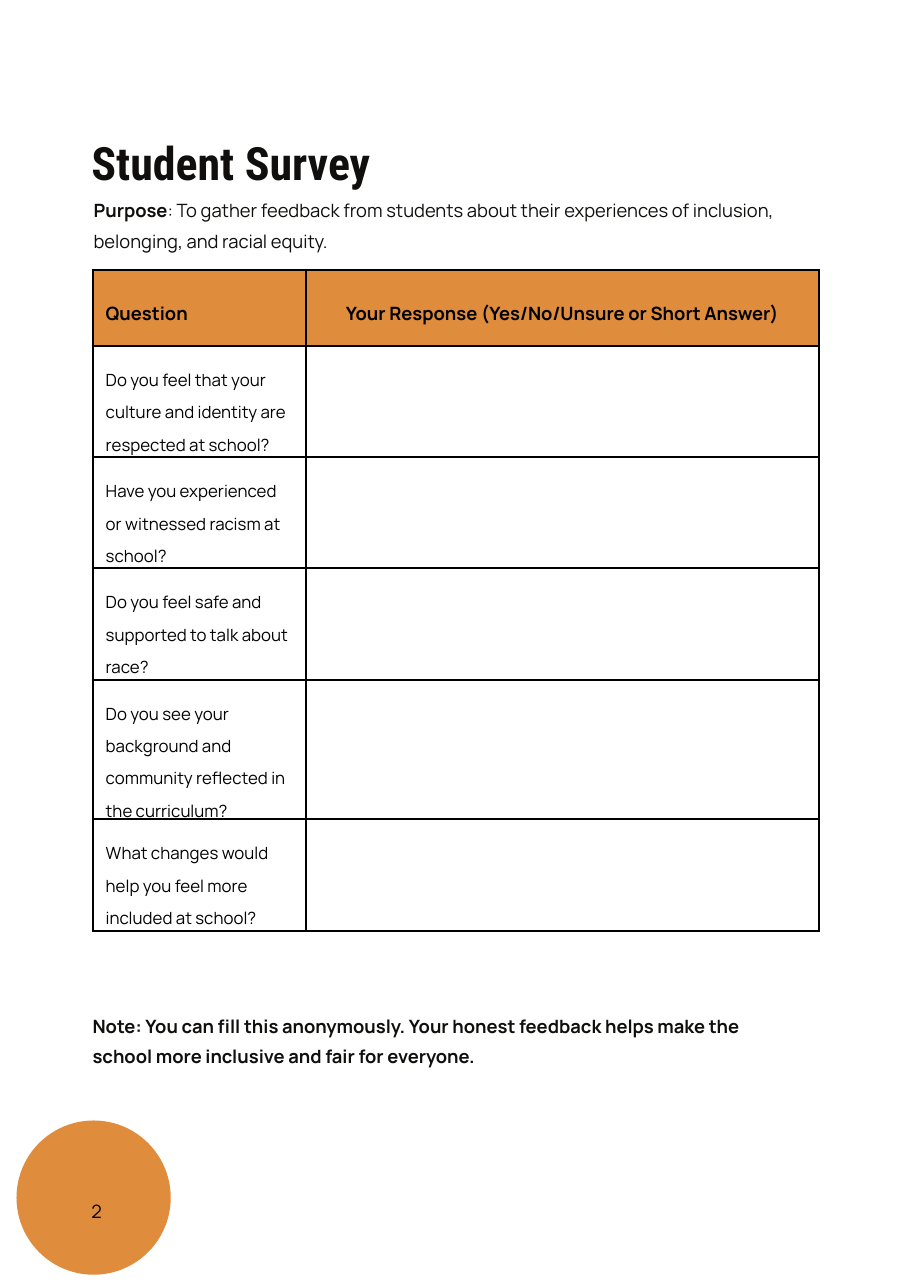
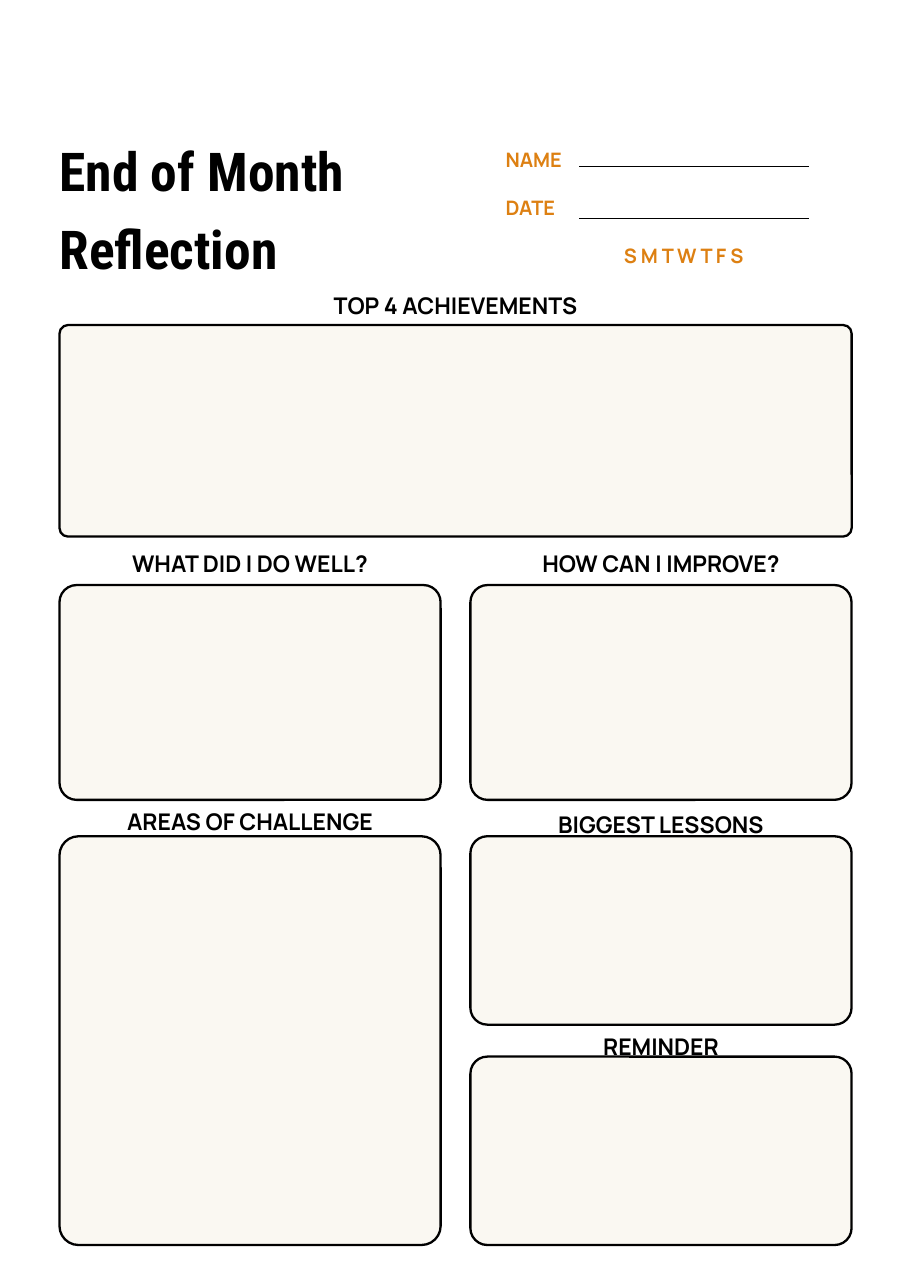
from lxml import etree
from pptx import Presentation
from pptx import util as u
from pptx.dml.color import RGBColor
from pptx.enum import shapes, text
from pptx.oxml import ns

PX = 9144  # 100 px to the inch
PAGE_W, PAGE_H = 826, 1169

BLACK = RGBColor(0x00, 0x00, 0x00)
INK = RGBColor(0x10, 0x0F, 0x0D)
ORANGE = RGBColor(0xDF, 0x8C, 0x3D)
LABEL_ORANGE = RGBColor(0xDD, 0x80, 0x12)
CREAM = RGBColor(0xFA, 0xF8, 0xF2)

TITLE_FONT, BODY_FONT = "Roboto Condensed", "Manrope"
LEFT, CENTER = text.PP_ALIGN.LEFT, text.PP_ALIGN.CENTER

QUESTIONS = [
    "Do you feel that your culture and identity are respected at school?",
    "Have you experienced or witnessed racism at school?",
    "Do you feel safe and supported to talk about race?",
    "Do you see your background and community reflected in the curriculum?",
    "What changes would help you feel more included at school?",
]


def px(*lengths):
    return [u.Emu(length * PX) for length in lengths]


def style(paragraph, size, color=BLACK, bold=False, font=BODY_FONT,
          align=LEFT, spacing=1.4):
    paragraph.alignment = align
    paragraph.line_spacing = spacing
    paragraph.font.name = font
    paragraph.font.size = u.Pt(size)
    paragraph.font.bold = bold
    paragraph.font.color.rgb = color


def add_text(slide, box, words, size, **look):
    frame = slide.shapes.add_textbox(*px(*box)).text_frame
    frame.margin_left = frame.margin_right = 0
    frame.margin_top = frame.margin_bottom = 0
    frame.word_wrap = True
    frame.auto_size = text.MSO_AUTO_SIZE.SHAPE_TO_FIT_TEXT
    paragraph = frame.paragraphs[0]
    paragraph.text = words
    style(paragraph, size, **look)
    return paragraph


def add_title(slide, box, words, size, color, spacing):
    add_text(slide, box, words, size, color=color, bold=True,
             font=TITLE_FONT, spacing=spacing)


def add_panel(slide, box, radius):
    panel = slide.shapes.add_shape(shapes.MSO_SHAPE.ROUNDED_RECTANGLE, *px(*box))
    panel.adjustments[0] = round(radius / min(box[2:]), 2)
    panel.shadow.inherit = False
    panel.fill.solid()
    panel.fill.fore_color.rgb = CREAM
    panel.line.color.rgb = BLACK
    panel.line.width = u.Pt(1.5)


def add_rule(slide, left, right, y):
    rule = slide.shapes.add_connector(
        shapes.MSO_CONNECTOR.STRAIGHT, *px(left, y, right, y))
    rule.line.color.rgb = BLACK
    rule.line.width = u.Pt(0.75)
    etree.SubElement(rule._element.spPr, ns.qn("a:effectLst"))


def add_page_number(slide, number):
    disc = slide.shapes.add_shape(shapes.MSO_SHAPE.OVAL, *px(15, 1017, 140, 140))
    disc.shadow.inherit = False
    disc.fill.solid()
    disc.fill.fore_color.rgb = ORANGE
    disc.line.fill.background()
    add_text(slide, (83, 1081, 140, 25), number, 12)


def add_borders(cell):
    properties = cell._tc.get_or_add_tcPr()
    for position, side in enumerate(("a:lnL", "a:lnR", "a:lnT", "a:lnB")):
        border = etree.Element(ns.qn(side), w=str(u.Pt(1.5)))
        fill = etree.SubElement(border, ns.qn("a:solidFill"))
        etree.SubElement(fill, ns.qn("a:srgbClr"), val=str(BLACK))
        properties.insert(position, border)


def fill_cell(cell, words, size, fill=None, **look):
    cell.margin_left = cell.margin_right = px(12)[0]
    cell.margin_top = cell.margin_bottom = px(12)[0]
    cell.vertical_anchor = text.MSO_ANCHOR.MIDDLE
    if fill is None:
        cell.fill.background()
    else:
        cell.fill.solid()
        cell.fill.fore_color.rgb = fill
    add_borders(cell)
    paragraph = cell.text_frame.paragraphs[0]
    paragraph.text = words
    style(paragraph, size, **look)


def add_survey_table(slide, left, top):
    widths, heights = (194, 465), (69, 101, 101, 101, 124, 101)
    table = slide.shapes.add_table(
        len(heights), len(widths),
        *px(left, top, sum(widths), sum(heights))).table
    table.first_row = table.horz_banding = False
    for column, width in zip(table.columns, px(*widths)):
        column.width = width
    for row, height in zip(table.rows, px(*heights)):
        row.height = height

    # Header row
    fill_cell(table.cell(0, 0), "Question", 12, fill=ORANGE, bold=True)
    fill_cell(table.cell(0, 1), "Your Response (Yes/No/Unsure or Short Answer)",
              12, fill=ORANGE, bold=True, align=CENTER)
    # Questions with empty answers
    for row, question in enumerate(QUESTIONS, start=1):
        fill_cell(table.cell(row, 0), question, 11)
        fill_cell(table.cell(row, 1), "", 11)


def build_survey(slide):
    add_title(slide, (83, 122, 642, 45), "Student Survey", 30, INK, 1.0)

    # Purpose
    purpose = add_text(slide, (85, 173, 642, 48), "Purpose", 12, color=INK)
    purpose.runs[0].font.bold = True
    purpose.add_run().text = (": To gather feedback from students about their "
                              "experiences of inclusion, belonging, and racial equity.")

    add_survey_table(slide, 84, 245)
    add_page_number(slide, "2")
    add_text(slide, (84, 913, 642, 48),
             "Note: You can fill this anonymously. Your honest feedback helps "
             "make the school more inclusive and fair for everyone.",
             12, color=INK, bold=True)


def build_reflection(slide):
    left, width, gap = 54, 346, 27
    right = left + width + gap
    full = 2 * width + gap

    # Panels: heading, heading top, left, top, width, height, corner radius
    panels = [
        ("TOP 4 ACHIEVEMENTS", 255, left, 295, full, 192, 7),
        ("WHAT DID I DO WELL?", 489, left, 531, width, 195, 16),
        ("HOW CAN I IMPROVE?", 489, right, 531, width, 195, 16),
        ("AREAS OF CHALLENGE", 723, left, 759, width, 371, 16),
        ("BIGGEST LESSONS", 726, right, 759, width, 171, 16),
        ("REMINDER", 927, right, 959, width, 171, 16),
    ]
    for heading, heading_top, x, y, w, h, radius in panels:
        add_panel(slide, (x, y, w, h), radius)
        add_text(slide, (x, heading_top, w, 32), heading, 15,
                 bold=True, align=CENTER)

    add_title(slide, (left, 114, 374, 117), "End of Month Reflection", 35, BLACK, 1.2)

    # Name, date and weekday
    label = {"color": LABEL_ORANGE, "bold": True}
    for name, label_top, rule_y in (("NAME", 125, 151), ("DATE", 169, 198)):
        add_text(slide, (459, label_top, 67, 22), name, 13, **label)
        add_rule(slide, 526, 734, rule_y)
    add_text(slide, (483, 212, 275, 22), "S M T W T F S", 13, align=CENTER, **label)


def main():
    deck = Presentation()
    deck.slide_width, deck.slide_height = px(PAGE_W, PAGE_H)
    blank = deck.slide_layouts[6]
    for build in (build_survey, build_reflection):
        build(deck.slides.add_slide(blank))
    deck.save("out.pptx")


if __name__ == "__main__":
    main()
